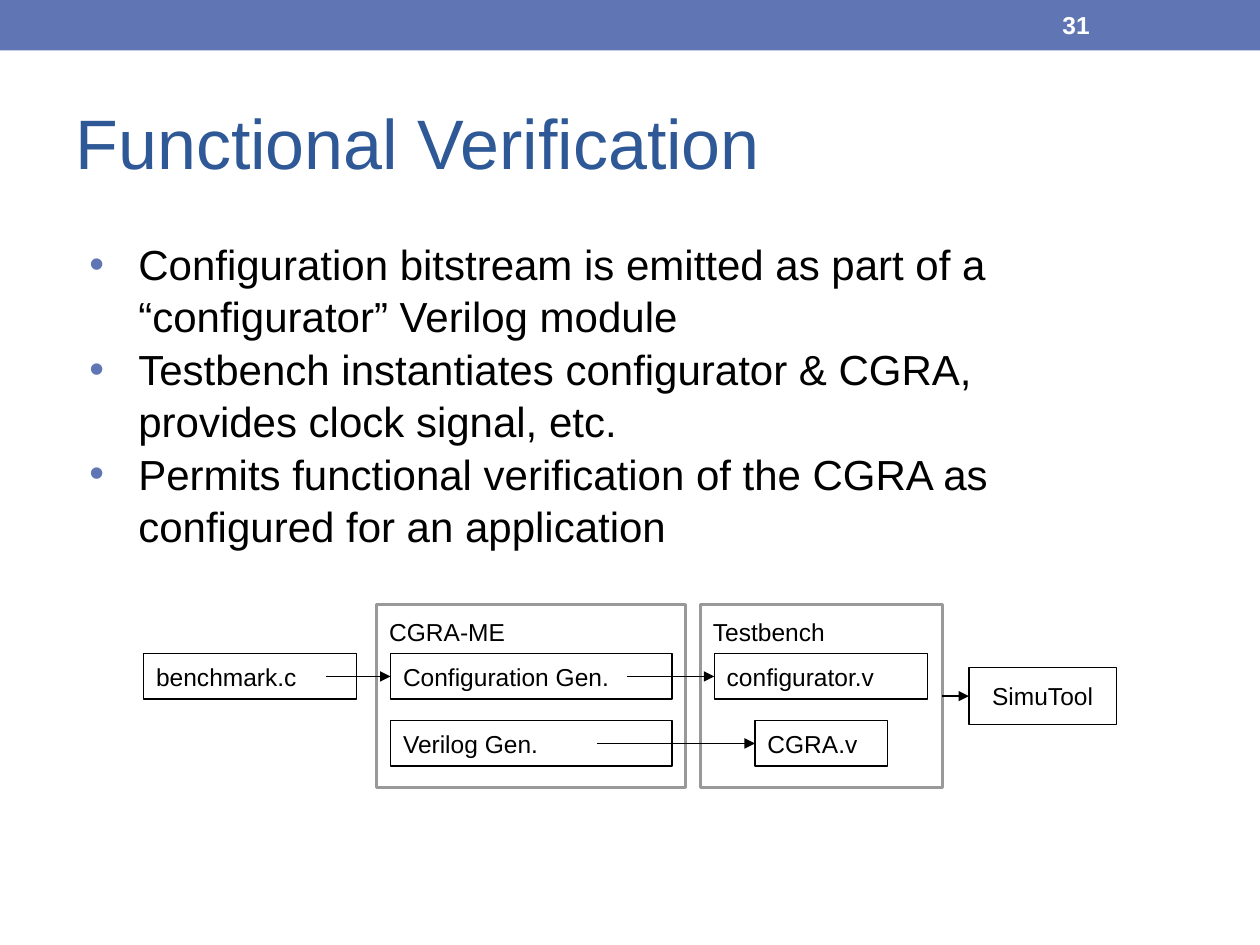
from dataclasses import dataclass

from lxml import etree
from pptx import Presentation
from pptx.dml.color import RGBColor
from pptx.enum import shapes, text
from pptx.oxml import ns
from pptx.util import Pt


@dataclass(frozen=True)
class Theme:
    font: str = "Arial"
    accent: str = "6076B4"
    heading: str = "2F5897"
    ink: str = "000000"
    frame: str = "999999"
    paper: str = "FFFFFF"
    title_size: float = 40
    body_size: float = 24
    label_size: float = 14
    frame_width: float = 1.5
    line_width: float = 0.75
    inset: float = 7.2


THEME = Theme()
ALIGN = text.PP_ALIGN
ANCHOR = text.MSO_ANCHOR


def rgb(value):
    return RGBColor.from_string(value)


def place(shape, box):
    shape.left, shape.top, shape.width, shape.height = map(Pt, box)


def add_bullet(paragraph, indent, hanging):
    props = paragraph._p.get_or_add_pPr()
    props.set("marL", str(Pt(indent)))
    props.set("indent", str(-Pt(hanging)))
    color = etree.SubElement(props, ns.qn("a:buClr"))
    etree.SubElement(color, ns.qn("a:srgbClr"), val=THEME.accent)
    etree.SubElement(props, ns.qn("a:buFont"), typeface=THEME.font)
    etree.SubElement(props, ns.qn("a:buChar"), char="•")


def write(shape, *paragraphs, size=THEME.label_size, color=THEME.ink, bold=False,
          align=ALIGN.LEFT, anchor=ANCHOR.MIDDLE, inset_y=THEME.inset,
          spacing=None, bullets=False):
    frame = shape.text_frame
    frame.word_wrap = True
    frame.auto_size = text.MSO_AUTO_SIZE.NONE
    frame.vertical_anchor = anchor
    frame.margin_left = frame.margin_right = Pt(THEME.inset)
    frame.margin_top = frame.margin_bottom = Pt(inset_y)
    frame.text = "\n".join(paragraphs)
    for paragraph in frame.paragraphs:
        paragraph.alignment = align
        if spacing:
            paragraph.line_spacing = spacing
        if bullets:
            add_bullet(paragraph, indent=36, hanging=28)
        for run in paragraph.runs:
            run.font.name = THEME.font
            run.font.size = Pt(size)
            run.font.bold = bold
            run.font.color.rgb = rgb(color)


def add_box(slide, box, label, line=THEME.ink, width=THEME.line_width, **text_format):
    """Add an unfilled, outlined rectangle with a label."""
    outline = slide.shapes.add_shape(shapes.MSO_SHAPE.RECTANGLE, *map(Pt, box))
    outline.shadow.inherit = False
    outline.fill.background()
    outline.line.color.rgb = rgb(line)
    outline.line.width = Pt(width)
    write(outline, label, **text_format)
    return outline


def add_arrow(slide, start_x, target):
    """Draw a level arrow from start_x to the left side of the target."""
    y = target.top + target.height // 2
    arrow = slide.shapes.add_connector(
        shapes.MSO_CONNECTOR.STRAIGHT, Pt(start_x), y, target.left, y)
    arrow.end_connect(target, 1)
    arrow.line.color.rgb = rgb(THEME.ink)
    arrow.line.width = Pt(THEME.line_width)
    etree.SubElement(arrow.line._get_or_add_ln(), ns.qn("a:tailEnd"), type="triangle")
    etree.SubElement(arrow._element.spPr, ns.qn("a:effectLst"))


def build_header(slide, box, number):
    left, top, width, height = box
    bar = slide.shapes.add_shape(shapes.MSO_SHAPE.RECTANGLE, *map(Pt, box))
    bar.shadow.inherit = False
    bar.fill.solid()
    bar.fill.fore_color.rgb = rgb(THEME.accent)
    bar.line.fill.background()
    page = slide.shapes.add_textbox(
        Pt(left + width - 120), Pt(top + 1.4), Pt(84), Pt(height - 2.8))
    write(page, number, color=THEME.paper, bold=True, inset_y=3.6)


def build_title(slide, box, title):
    place(slide.shapes.title, box)
    write(slide.shapes.title, title, size=THEME.title_size, color=THEME.heading)


def build_points(slide, box, points):
    body = slide.shapes.add_textbox(*map(Pt, box))
    write(body, *points, size=THEME.body_size, anchor=ANCHOR.TOP,
          spacing=1.04, bullets=True)


def build_flow(slide, box):
    left, top, width, height = box
    row_height = 25.9
    upper, lower = top + 28, top + 66.3
    file_width, generator_width = 121.7, 160.8
    simulator_width, simulator_height = 84.2, 32.4
    tool_left, bench_left = left + 133.2, left + 318.2
    bench_width = 138.2
    pad = 7.9

    for x, frame_width, label in ((tool_left, 176.6, "CGRA-ME"),
                                  (bench_left, bench_width, "Testbench")):
        add_box(slide, (x, top, frame_width, height), label, line=THEME.frame,
                width=THEME.frame_width, anchor=ANCHOR.TOP)

    def step(x, y, step_width, label):
        return add_box(slide, (x, y, step_width, row_height), label)

    step(left, upper, file_width, "benchmark.c")
    generator = step(tool_left + pad, upper, generator_width, "Configuration Gen.")
    step(tool_left + pad, lower, generator_width, "Verilog Gen.")
    configurator = step(bench_left + pad, upper, file_width, "configurator.v")
    array = step(bench_left + 31.1, lower, 75.6, "CGRA.v")
    simulator = add_box(
        slide, (left + width - simulator_width, top + 36, simulator_width,
                simulator_height), "SimuTool", align=ALIGN.CENTER)

    for start_x, target in ((left + 104.3, generator),
                            (left + 276.4, configurator),
                            (left + 259.2, array),
                            (bench_left + bench_width, simulator)):
        add_arrow(slide, start_x, target)


def main():
    deck = Presentation()
    deck.slide_width, deck.slide_height = Pt(720), Pt(540)
    slide = deck.slides.add_slide(deck.slide_layouts.get_by_name("Title Only"))
    build_header(slide, (0, 0, 720, 28.8), "31")
    build_title(slide, (36, 41.8, 648, 77.8), "Functional Verification")
    build_points(slide, (36, 128, 648, 188), (
        "Configuration bitstream is emitted as part of a “configurator” Verilog module",
        "Testbench instantiates configurator & CGRA,\vprovides clock signal, etc.",
        "Permits functional verification of the CGRA as configured for an application",
    ))
    build_flow(slide, (82.1, 345.6, 555.8, 104.4))
    deck.save("out.pptx")


if __name__ == "__main__":
    main()
